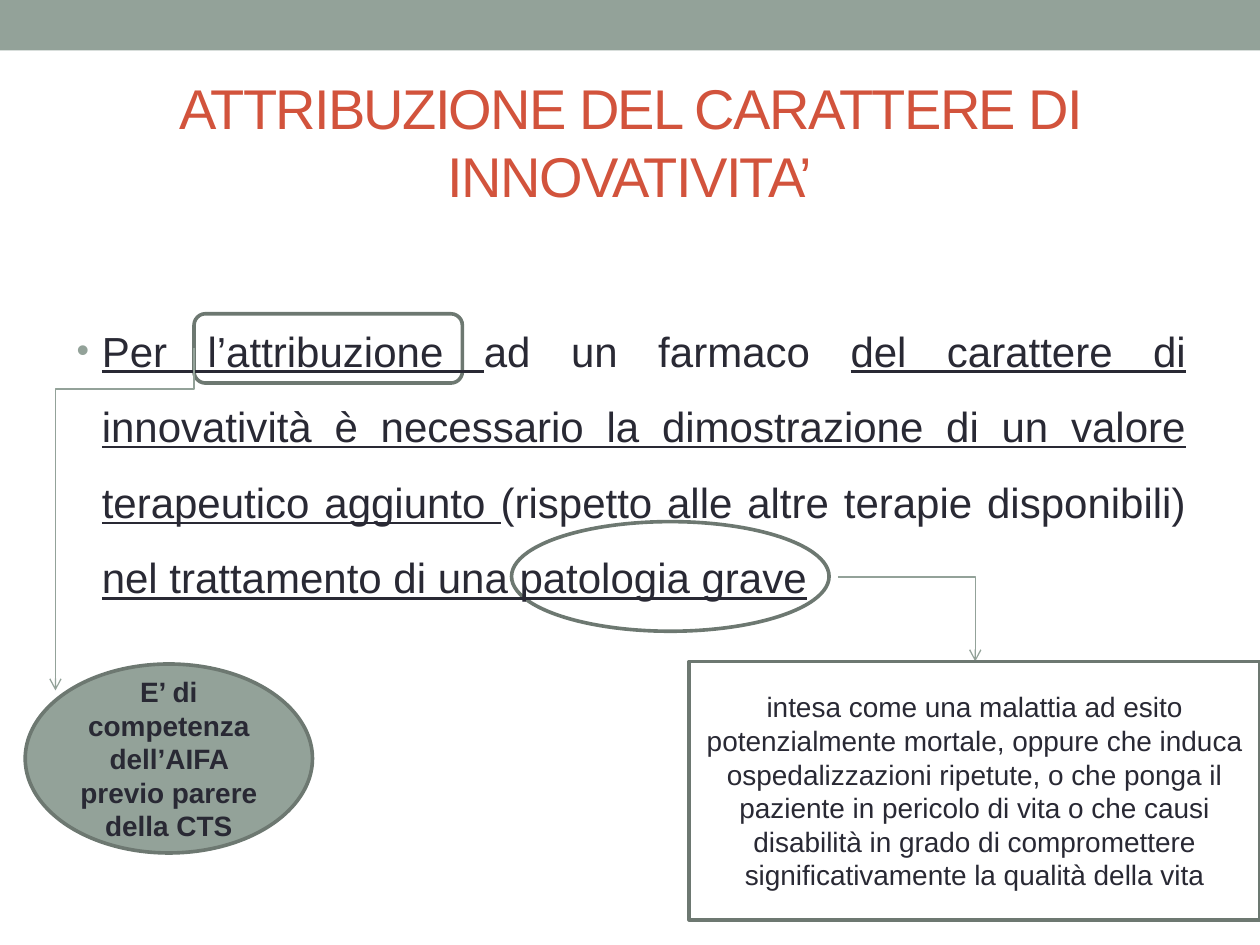
from pptx import Presentation
from pptx.dml.color import RGBColor
from pptx.enum.shapes import MSO_CONNECTOR as Link, MSO_SHAPE as Form
from pptx.enum.text import MSO_ANCHOR as Anchor, MSO_AUTO_SIZE as AutoSize, PP_ALIGN as Align
from pptx.oxml.ns import qn
from pptx.util import Inches, Pt
from lxml.etree import SubElement

SAGE = "93A299"
DARK_SAGE = "6D7871"
INK = "292934"
RED = "D2533C"
WHITE = "FFFFFF"


def color(value):
    return RGBColor.from_string(value)


class SlideBuilder:
    font = "Arial"
    outline = Pt(2.08)
    thin = Pt(0.75)

    def __init__(self, slide):
        self.slide = slide

    def format_span(self, span, size, ink=INK, bold=False, underline=False):
        span.font.name = self.font
        span.font.size = Pt(size)
        span.font.color.rgb = color(ink)
        span.font.bold = bold
        span.font.underline = underline

    def title(self, text, left, top, width, height):
        box = self.slide.shapes.title
        box.left, box.top = Inches(left), Inches(top)
        box.width, box.height = Inches(width), Inches(height)
        frame = box.text_frame
        frame.text = text
        frame.auto_size = AutoSize.NONE
        frame.vertical_anchor = Anchor.MIDDLE
        para = frame.paragraphs[0]
        para.alignment = Align.CENTER
        span = para.runs[0]
        self.format_span(span, 32, RED)
        span.font._element.set("spc", "-100")

    def shape(self, form, left, top, width, height, fill=WHITE, line=DARK_SAGE, text="", bold=False):
        shape = self.slide.shapes.add_shape(form, Inches(left), Inches(top), Inches(width), Inches(height))
        shape.shadow.inherit = False
        shape.fill.solid()
        shape.fill.fore_color.rgb = color(fill)
        if line:
            shape.line.color.rgb = color(line)
            shape.line.width = self.outline
        else:
            shape.line.fill.background()
        if text:
            frame = shape.text_frame
            frame.text = text
            frame.word_wrap = True
            frame.vertical_anchor = Anchor.MIDDLE
            para = frame.paragraphs[0]
            para.alignment = Align.CENTER
            self.format_span(para.runs[0], 16, bold=bold)

    def bullet_text(self, parts, left, top, width, height, margin_top):
        box = self.slide.shapes.add_textbox(Inches(left), Inches(top), Inches(width), Inches(height))
        frame = box.text_frame
        frame.word_wrap = True
        frame.margin_top = Inches(margin_top)
        para = frame.paragraphs[0]
        para.alignment = Align.JUSTIFY
        para.line_spacing = 1.5
        for text, underline in parts:
            span = para.add_run()
            span.text = text
            self.format_span(span, 24, underline=underline)
        settings = para._p.get_or_add_pPr()
        settings.set("marL", str(Inches(0.2)))
        settings.set("indent", str(-Inches(0.2)))
        tint = SubElement(settings, qn("a:buClr"))
        SubElement(tint, qn("a:srgbClr"), val=SAGE)
        SubElement(settings, qn("a:buSzPct"), val="85000")
        SubElement(settings, qn("a:buFont"), typeface=self.font)
        SubElement(settings, qn("a:buChar"), char="•")

    def elbow(self, left, top, width, height, preset, rotation=0, bend=None):
        link = self.slide.shapes.add_connector(
            Link.ELBOW, Inches(left), Inches(top), Inches(left + width), Inches(top + height))
        link.line.color.rgb = color(SAGE)
        link.line.width = self.thin
        SubElement(link.line._get_or_add_ln(), qn("a:tailEnd"), type="arrow")
        properties = link._element.spPr
        SubElement(properties, qn("a:effectLst"))
        properties.find(qn("a:xfrm")).set("rot", str(rotation * 60000))
        geometry = properties.find(qn("a:prstGeom"))
        geometry.set("prst", preset)
        if bend is not None:
            guides = geometry.find(qn("a:avLst"))
            SubElement(guides, qn("a:gd"), name="adj1", fmla=f"val {round(bend * 100000)}")


def main():
    deck = Presentation()
    deck.slide_width, deck.slide_height = Inches(10), Inches(7.5)
    page = SlideBuilder(deck.slides.add_slide(deck.slide_layouts[5]))

    page.shape(Form.RECTANGLE, 0, 0, 10, 0.4, fill=SAGE, line=None)
    page.shape(Form.ROUNDED_RECTANGLE, 1.54, 2.49, 2.13, 0.55)
    page.shape(Form.OVAL, 4.06, 4.14, 2.52, 0.87)
    page.title("ATTRIBUZIONE DEL CARATTERE DI INNOVATIVITA’", 0.5, 0.58, 9, 1.08)
    page.bullet_text([
        ("Per l’attribuzione ", True),
        ("ad un farmaco ", False),
        ("del carattere di innovatività è necessario la dimostrazione "
         "di un valore terapeutico aggiunto ", True),
        ("(rispetto alle altre terapie disponibili) ", False),
        ("nel trattamento di una patologia grave", True),
    ], 0.51, 1.86, 9, 5.33, margin_top=0.52)
    page.elbow(6.65, 4.58, 1.09, 0.67, "bentConnector2")
    page.shape(
        Form.RECTANGLE, 5.47, 5.25, 4.53, 2.05,
        text="intesa come una malattia ad esito potenzialmente mortale, oppure che induca "
             "ospedalizzazioni ripetute, o che ponga il paziente in pericolo di vita o che causi "
             "disabilità in grado di compromettere significativamente la qualità della vita")
    page.elbow(-0.37, 3.57, 2.72, 1.1, "bentConnector3", rotation=90, bend=0.12)
    page.shape(
        Form.OVAL, 0.2, 5.27, 2.28, 1.5, fill=SAGE, bold=True,
        text="E’ di competenza dell’AIFA previo parere della CTS")

    deck.save("out.pptx")


if __name__ == "__main__":
    main()
